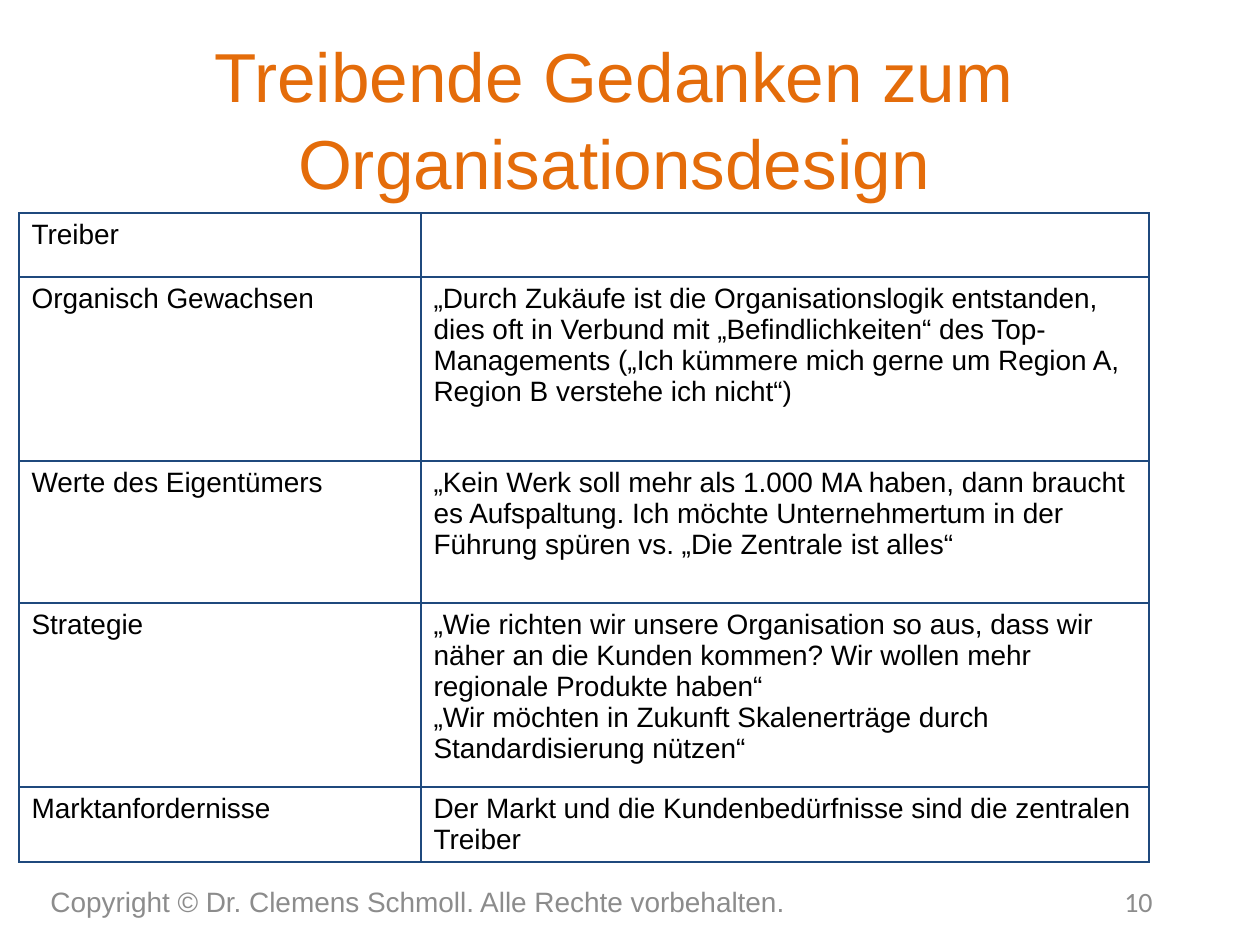
from dataclasses import dataclass

from lxml import etree
from pptx import Presentation
from pptx.dml.color import RGBColor
from pptx.enum.text import MSO_ANCHOR, PP_ALIGN
from pptx.oxml.ns import qn
from pptx.util import Pt

PX = 914400 / 126
MIDDLE = MSO_ANCHOR.MIDDLE
LEFT, CENTER, RIGHT = PP_ALIGN.LEFT, PP_ALIGN.CENTER, PP_ALIGN.RIGHT
TITLE_ONLY = 5


@dataclass(frozen=True)
class Theme:
    heading: str = "E46C0A"
    text: str = "000000"
    muted: str = "8C8C8C"
    border: str = "1F497D"
    cell: str = "FFFFFF"
    font: str = "Arial"
    number_font: str = "Calibri"
    title_size: float = 39.6
    body_size: float = 16


@dataclass(frozen=True)
class Box:
    x: int
    y: int
    w: int
    h: int


@dataclass(frozen=True)
class Row:
    height: int
    driver: str
    thoughts: tuple[str, ...] = ()


@dataclass(frozen=True)
class Footer:
    box: Box
    text: str
    font: str
    align: PP_ALIGN


THEME = Theme()
TITLE_BOX = Box(63, 38, 1102, 157)
TABLE_BOX = Box(19, 213, 1130, 649)
COLUMN_WIDTHS = (402, 728)
ROWS = (
    Row(64, "Treiber"),
    Row(184, "Organisch Gewachsen", (
        "„Durch Zukäufe ist die Organisationslogik entstanden, dies oft in Verbund mit "
        "„Befindlichkeiten“ des Top-Managements („Ich kümmere mich gerne um Region A, "
        "Region B verstehe ich nicht“)",)),
    Row(142, "Werte des Eigentümers", (
        "„Kein Werk soll mehr als 1.000 MA haben, dann braucht es Aufspaltung. Ich möchte "
        "Unternehmertum in der Führung spüren vs. „Die Zentrale ist alles“",)),
    Row(184, "Strategie", (
        "„Wie richten wir unsere Organisation so aus, dass wir näher an die Kunden kommen? "
        "Wir wollen mehr regionale Produkte haben“",
        "„Wir möchten in Zukunft Skalenerträge durch Standardisierung nützen“")),
    Row(75, "Marktanfordernisse", (
        "Der Markt und die Kundenbedürfnisse sind die zentralen Treiber",)),
)
FOOTERS = (
    Footer(Box(38, 876, 801, 50), "Copyright © Dr. Clemens Schmoll. Alle Rechte vorbehalten.",
           THEME.font, LEFT),
    Footer(Box(872, 876, 293, 50), "10", THEME.number_font, RIGHT),
)


def px(n: int) -> int:
    return round(n * PX)


def emu(box: Box) -> tuple[int, ...]:
    return tuple(px(n) for n in (box.x, box.y, box.w, box.h))


def write(tf, lines: tuple[str, ...], size: float, color: str,
          font: str = THEME.font, align: PP_ALIGN = LEFT) -> None:
    tf.word_wrap = True
    tf.text = "\n".join(lines)
    for p in tf.paragraphs:
        p.alignment = align
        p.font.name = font
        p.font.size = Pt(size)
        p.font.color.rgb = RGBColor.from_string(color)


def add_borders(cell) -> None:
    tc_pr = cell._tc.get_or_add_tcPr()
    for i, side in enumerate(("lnL", "lnR", "lnT", "lnB")):
        ln = etree.Element(qn(f"a:{side}"), w=str(Pt(1)))
        fill = etree.SubElement(ln, qn("a:solidFill"))
        etree.SubElement(fill, qn("a:srgbClr"), val=THEME.border)
        tc_pr.insert(i, ln)


def add_title(slide, text: str) -> None:
    title = slide.shapes.title
    title.left, title.top, title.width, title.height = emu(TITLE_BOX)
    tf = title.text_frame
    tf.vertical_anchor = MIDDLE
    write(tf, (text,), THEME.title_size, THEME.heading, align=CENTER)
    tf.paragraphs[0].line_spacing = 1.04


def add_driver_table(slide) -> None:
    table = slide.shapes.add_table(len(ROWS), len(COLUMN_WIDTHS), *emu(TABLE_BOX)).table
    table.first_row = table.horz_banding = False
    for column, width in zip(table.columns, COLUMN_WIDTHS):
        column.width = px(width)
    for r, row in enumerate(ROWS):
        table.rows[r].height = px(row.height)
        for c, lines in enumerate(((row.driver,), row.thoughts)):
            cell = table.cell(r, c)
            cell.fill.solid()
            cell.fill.fore_color.rgb = RGBColor.from_string(THEME.cell)
            add_borders(cell)
            write(cell.text_frame, lines, THEME.body_size, THEME.text)


def add_footer(slide, footer: Footer) -> None:
    tf = slide.shapes.add_textbox(*emu(footer.box)).text_frame
    tf.vertical_anchor = MIDDLE
    write(tf, (footer.text,), THEME.body_size, THEME.muted, footer.font, footer.align)


def main() -> None:
    prs = Presentation()
    prs.slide_width, prs.slide_height = px(1260), px(945)
    slide = prs.slides.add_slide(prs.slide_layouts[TITLE_ONLY])
    add_title(slide, "Treibende Gedanken zum Organisationsdesign")
    add_driver_table(slide)
    for footer in FOOTERS:
        add_footer(slide, footer)
    prs.save("out.pptx")


if __name__ == "__main__":
    main()
